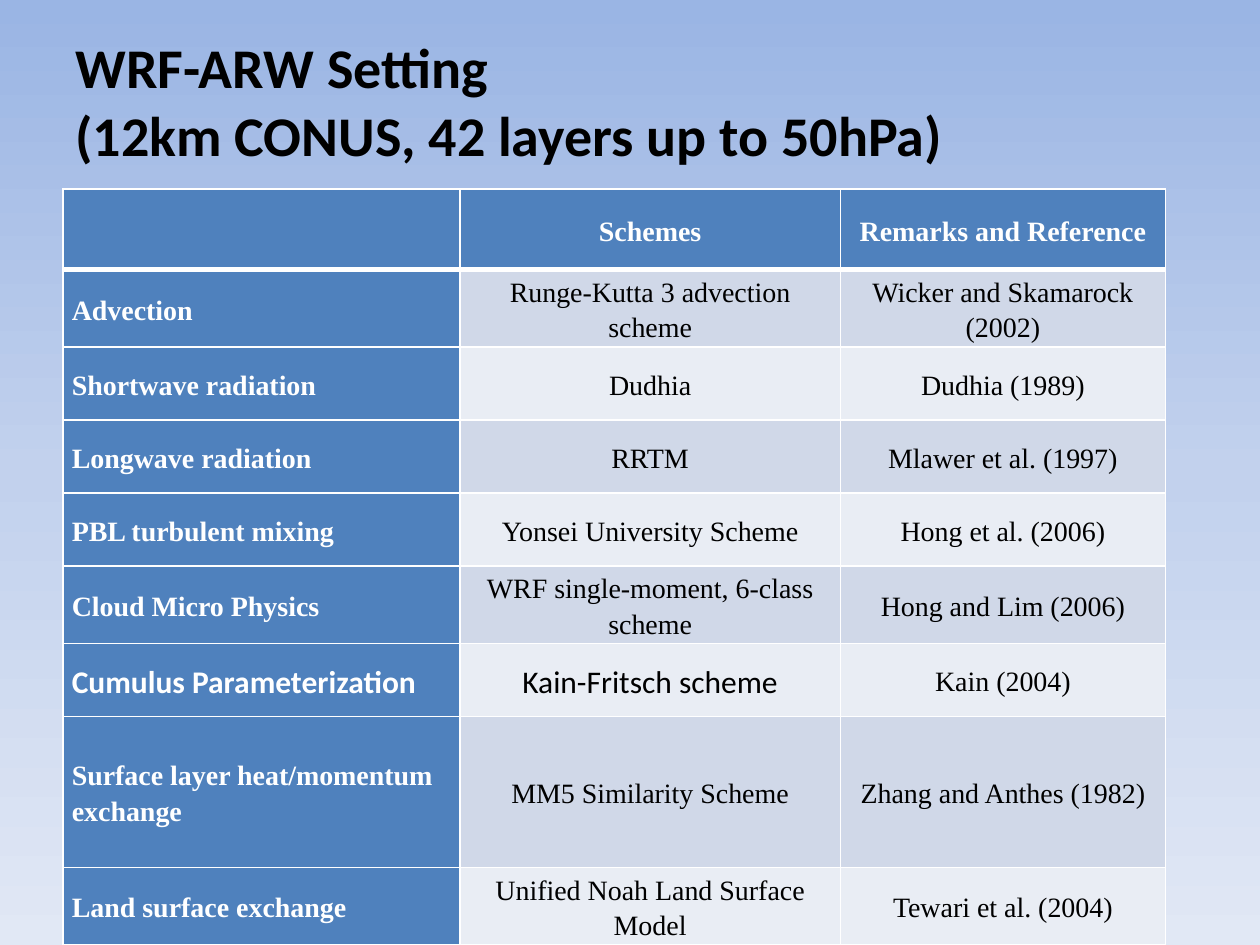
from copy import deepcopy

from lxml.etree import SubElement
from pptx import Presentation
from pptx.dml.color import RGBColor
from pptx.enum.text import MSO_ANCHOR, PP_ALIGN
from pptx.oxml.ns import qn
from pptx.util import Inches, Pt

BLACK = RGBColor(0x00, 0x00, 0x00)
WHITE = RGBColor(0xFF, 0xFF, 0xFF)
BLUE = RGBColor(0x4F, 0x81, 0xBD)
BANDS = [RGBColor(0xE9, 0xED, 0xF4), RGBColor(0xD0, 0xD8, 0xE8)]
SKY = [
    RGBColor(0x9A, 0xB5, 0xE4),
    RGBColor(0xC2, 0xD1, 0xED),
    RGBColor(0xE1, 0xE8, 0xF5),
]

SERIF = ("Times New Roman", 16)
SANS = ("Calibri", 18)
TITLE = ["WRF-ARW Setting ", "(12km CONUS, 42 layers up to 50hPa)"]
COLS = [3.15, 3.02, 2.58]
ROWS = [0.64] + [0.58] * 6 + [1.2, 0.58]
CELLS = [
    ["", "Schemes", "Remarks and Reference"],
    ["Advection", "Runge-Kutta 3 advection scheme", "Wicker and Skamarock (2002)"],
    ["Shortwave radiation", "Dudhia", "Dudhia (1989)"],
    ["Longwave radiation", "RRTM", "Mlawer et al. (1997)"],
    ["PBL turbulent mixing", "Yonsei University Scheme", "Hong et al. (2006)"],
    ["Cloud Micro Physics", "WRF single-moment, 6-class scheme", "Hong and Lim (2006)"],
    ["Cumulus Parameterization", "Kain-Fritsch scheme", "Kain (2004)"],
    ["Surface layer heat/momentum exchange", "MM5 Similarity Scheme", "Zhang and Anthes (1982)"],
    ["Land surface exchange", "Unified Noah Land Surface Model", "Tewari et al. (2004)"],
]
SANS_CELLS = {"Cumulus Parameterization", "Kain-Fritsch scheme"}


def paint_back(slide):
    fill = slide.background.fill
    fill.gradient()
    fill.gradient_angle = 270
    stops = slide.element.find(".//" + qn("a:gsLst"))
    stops.insert(1, deepcopy(stops[0]))
    for i, (stop, color) in enumerate(zip(fill.gradient_stops, SKY)):
        stop.position = i / 2
        stop.color.rgb = color


def add_run(para, text, face, color, bold):
    run = para.add_run()
    run.text = text
    run.font.name, size = face
    run.font.size = Pt(size)
    run.font.bold = bold
    run.font.color.rgb = color


def add_title(slide):
    box = slide.shapes.add_textbox(Inches(0.5), Inches(0.17), Inches(9), Inches(1.25))
    frame = box.text_frame
    frame.word_wrap = True
    frame.vertical_anchor = MSO_ANCHOR.MIDDLE
    para = frame.paragraphs[0]
    for i, line in enumerate(TITLE):
        if i:
            para.add_line_break()
        add_run(para, line, ("Calibri", 32), BLACK, True)


def add_edges(cell, row):
    props = cell._tc.get_or_add_tcPr()
    for side in "LRTB":
        thick = (row, side) in {(0, "B"), (1, "T")}
        line = SubElement(props, qn("a:ln" + side), w=str(Pt(3 if thick else 1)))
        fill = SubElement(line, qn("a:solidFill"))
        SubElement(fill, qn("a:srgbClr"), val=str(WHITE))


def fill_cell(cell, row, col, text):
    head = row == 0 or col == 0
    add_edges(cell, row)
    cell.fill.solid()
    cell.fill.fore_color.rgb = BLUE if head else BANDS[row % 2]
    cell.vertical_anchor = MSO_ANCHOR.MIDDLE
    cell.margin_left = cell.margin_right = Inches(0.07)
    cell.margin_top = cell.margin_bottom = 0
    if text:
        para = cell.text_frame.paragraphs[0]
        para.alignment = PP_ALIGN.CENTER if col else PP_ALIGN.LEFT
        para.line_spacing = 1.15
        face = SANS if text in SANS_CELLS else SERIF
        add_run(para, text, face, WHITE if head else BLACK, head)


def add_grid(slide):
    frame = slide.shapes.add_table(
        len(ROWS), len(COLS), Inches(0.5), Inches(1.5),
        Inches(sum(COLS)), Inches(sum(ROWS)),
    )
    table = frame.table
    table.first_col = True
    for col, width in zip(table.columns, COLS):
        col.width = Inches(width)
    for row, height in zip(table.rows, ROWS):
        row.height = Inches(height)
    for r, line in enumerate(CELLS):
        for c, text in enumerate(line):
            fill_cell(table.cell(r, c), r, c, text)


def main():
    deck = Presentation()
    deck.slide_width = Inches(10)
    deck.slide_height = Inches(7.5)
    slide = deck.slides.add_slide(deck.slide_layouts[6])
    paint_back(slide)
    add_title(slide)
    add_grid(slide)
    deck.save("out.pptx")


if __name__ == "__main__":
    main()
